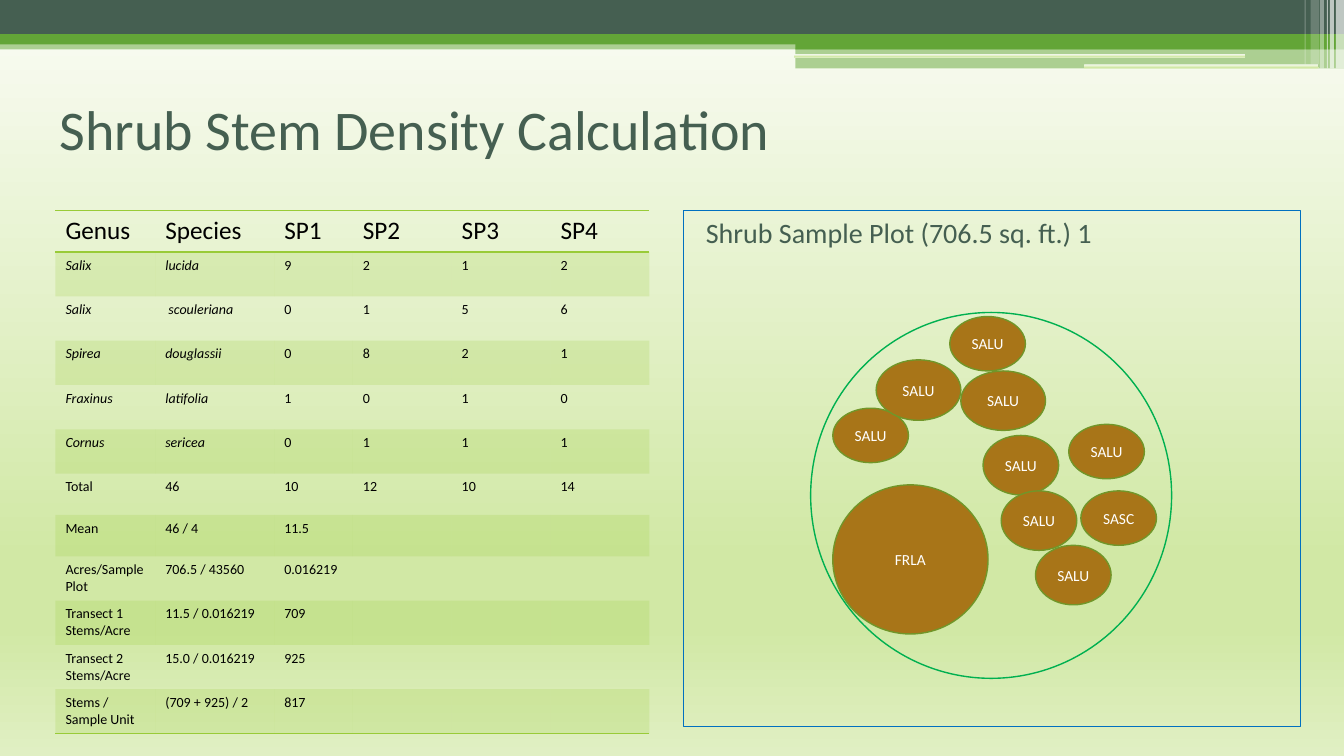
import dataclasses
import typing

import pptx
import pptx.dml.color
import pptx.enum.shapes
import pptx.enum.text
import pptx.oxml
import pptx.oxml.ns
import pptx.util

EMU_PER_PX = 9144
FONT = "Calibri"
DARK_GREEN = "455F51"
GREEN = "63A537"
LIME = "99CB38"
WHITE = "FFFFFF"
BLACK = "000000"
BROWN = "A87518"
BACKDROP_STOPS = [(0, "FAFCF5"), (74, "D1E8A5"), (83, "D1E8A5"), (100, "E0EFC3")]
NO_STYLE_NO_GRID = "{2D5ABB26-0587-4C30-8999-92F81FD0307C}"
RECTANGLE = pptx.enum.shapes.MSO_SHAPE.RECTANGLE
ROUNDED = pptx.enum.shapes.MSO_SHAPE.ROUNDED_RECTANGLE
OVAL = pptx.enum.shapes.MSO_SHAPE.OVAL
LEFT = pptx.enum.text.PP_ALIGN.LEFT
CENTER = pptx.enum.text.PP_ALIGN.CENTER


@dataclasses.dataclass
class Box:
    left: int
    top: int
    width: int
    height: int


@dataclasses.dataclass
class Band:
    box: Box
    color: str
    opacity: int = 100


@dataclasses.dataclass
class Shrub:
    box: Box
    code: str = "SALU"


BANDS = [
    Band(Box(0, 40, 1333, 9), GREEN, 50),
    Band(Box(0, 0, 1333, 34), DARK_GREEN),
    Band(Box(0, 34, 1333, 10), GREEN),
    Band(Box(789, 39, 544, 10), GREEN),
    Band(Box(789, 48, 544, 20), GREEN, 50),
]
BARS = [Box(788, 54, 447, 3), Box(1075, 64, 233, 4)]
STRIPES = [
    Band(Box(1325, 0, 8, 68), WHITE, 65),
    Band(Box(1319, 0, 4, 68), WHITE, 65),
    Band(Box(1316, 0, 1, 68), WHITE, 60),
    Band(Box(1309, 0, 4, 68), WHITE, 40),
    Band(Box(1300, 0, 8, 64), WHITE, 20),
    Band(Box(1294, 0, 1, 64), WHITE, 30),
]
SHRUBS = [
    Shrub(Box(826, 405, 75, 54)),
    Shrub(Box(1072, 487, 75, 54), "SASC"),
    Shrub(Box(953, 368, 84, 59)),
    Shrub(Box(826, 481, 154, 148), "FRLA"),
    Shrub(Box(1027, 541, 75, 59)),
    Shrub(Box(975, 432, 75, 59)),
    Shrub(Box(869, 357, 84, 60)),
    Shrub(Box(993, 487, 75, 59)),
    Shrub(Box(942, 314, 75, 54)),
    Shrub(Box(1060, 421, 75, 54)),
]
COLUMN_WIDTHS = [99, 118, 78, 98, 98, 98]
ROW_HEIGHTS = [41] + [44] * 5 + [41] * 2 + [44] * 4
SPECIES_ROWS = range(1, 6)
DENSITY_ROWS = [
    ["Genus", "Species", "SP1", "SP2", "SP3", "SP4"],
    ["Salix", "lucida", "9", "2", "1", "2"],
    ["Salix", " scouleriana", "0", "1", "5", "6"],
    ["Spirea", "douglassii", "0", "8", "2", "1"],
    ["Fraxinus", "latifolia", "1", "0", "1", "0"],
    ["Cornus", "sericea", "0", "1", "1", "1"],
    ["Total", "46", "10", "12", "10", "14"],
    ["Mean", "46 / 4", "11.5", "", "", ""],
    ["Acres/Sample Plot", "706.5 / 43560", "0.016219", "", "", ""],
    ["Transect 1 Stems/Acre", "11.5 / 0.016219", "709", "", "", ""],
    ["Transect 2 Stems/Acre", "15.0 / 0.016219", "925", "", "", ""],
    ["Stems / Sample Unit", "(709 + 925) / 2", "817", "", "", ""],
]


def px(length: int) -> int:
    return pptx.util.Emu(length * EMU_PER_PX)


def place(box: Box) -> tuple:
    return px(box.left), px(box.top), px(box.width), px(box.height)


def rgb(color: str) -> pptx.dml.color.RGBColor:
    return pptx.dml.color.RGBColor.from_string(color)


def xml(markup: str) -> typing.Any:
    namespace = pptx.oxml.ns.nsdecls("a")
    return pptx.oxml.parse_xml(markup.replace(" ", f" {namespace} ", 1))


def fill_solid(fill: typing.Any, element: typing.Any, color: str, opacity: int = 100) -> None:
    fill.solid()
    fill.fore_color.rgb = rgb(color)
    if opacity < 100:
        swatch = element.find(".//" + pptx.oxml.ns.qn("a:srgbClr"))
        swatch.append(xml(f'<a:alpha val="{opacity * 1000}"/>'))


def fill_backdrop(fill: typing.Any, element: typing.Any) -> None:
    fill.gradient()
    gradient = element.find(".//" + pptx.oxml.ns.qn("a:gradFill"))
    for child in list(gradient):
        gradient.remove(child)
    stops = "".join(
        f'<a:gs pos="{position * 1000}"><a:srgbClr val="{color}"/></a:gs>'
        for position, color in BACKDROP_STOPS
    )
    gradient.append(xml(f"<a:gsLst >{stops}</a:gsLst>"))
    gradient.append(xml('<a:lin ang="5400000" scaled="0"/>'))


def add_shape(slide: typing.Any, kind: typing.Any, box: Box) -> typing.Any:
    shape = slide.shapes.add_shape(kind, *place(box))
    shape.shadow.inherit = False
    shape.fill.background()
    shape.line.fill.background()
    return shape


def set_line(shape: typing.Any, color: str, width: float) -> None:
    shape.line.color.rgb = rgb(color)
    shape.line.width = pptx.util.Pt(width)


def write(frame: typing.Any, text: str, size: int, color: str, alignment: typing.Any = LEFT) -> typing.Any:
    paragraph = frame.paragraphs[0]
    paragraph.text = text
    paragraph.alignment = alignment
    paragraph.font.size = pptx.util.Pt(size)
    paragraph.font.name = FONT
    paragraph.font.color.rgb = rgb(color)
    return paragraph


def add_band(slide: typing.Any, band: Band) -> None:
    shape = add_shape(slide, RECTANGLE, band.box)
    fill_solid(shape.fill, shape.element, band.color, band.opacity)


def add_title(slide: typing.Any) -> None:
    title = slide.shapes.title
    title.left, title.top, title.width, title.height = place(Box(49, 69, 1200, 117))
    title.text_frame.auto_size = pptx.enum.text.MSO_AUTO_SIZE.NONE
    title.text_frame.vertical_anchor = pptx.enum.text.MSO_ANCHOR.MIDDLE
    write(title.text_frame, "Shrub Stem Density Calculation", 40, DARK_GREEN)


def add_border(cell: typing.Any, side: str) -> None:
    cell._tc.get_or_add_tcPr().insert(0, xml(
        f'<a:ln{side} w="12700"><a:solidFill><a:srgbClr val="{LIME}"/></a:solidFill></a:ln{side}>'
    ))


def add_density_table(slide: typing.Any) -> None:
    box = Box(55, 209, sum(COLUMN_WIDTHS), sum(ROW_HEIGHTS))
    table = slide.shapes.add_table(len(ROW_HEIGHTS), len(COLUMN_WIDTHS), *place(box)).table
    table._tbl.tblPr.find(pptx.oxml.ns.qn("a:tableStyleId")).text = NO_STYLE_NO_GRID
    table.horz_banding = False
    table.first_row = False
    for column, width in zip(table.columns, COLUMN_WIDTHS):
        column.width = px(width)
    for row_index, texts in enumerate(DENSITY_ROWS):
        table.rows[row_index].height = px(ROW_HEIGHTS[row_index])
        for column_index, text in enumerate(texts):
            cell = table.cell(row_index, column_index)
            paragraph = write(cell.text_frame, text, 10 if row_index else 18, BLACK)
            paragraph.font.italic = row_index in SPECIES_ROWS and column_index < 2
            if row_index % 2:
                fill_solid(cell.fill, cell._tc.get_or_add_tcPr(), LIME, 20)
            else:
                cell.fill.background()
            if row_index in (0, len(DENSITY_ROWS) - 1):
                add_border(cell, "B")
            if row_index == 0:
                add_border(cell, "T")


def add_sample_plot(slide: typing.Any) -> None:
    panel = add_shape(slide, RECTANGLE, Box(678, 209, 612, 512))
    set_line(panel, "0070C0", 0.75)
    panel.text_frame.word_wrap = True
    panel.text_frame.vertical_anchor = pptx.enum.text.MSO_ANCHOR.TOP
    panel.text_frame.margin_left = px(22)
    heading = write(panel.text_frame, "Shrub Sample Plot (706.5 sq. ft.) 1", 20, DARK_GREEN)
    heading.space_before = pptx.util.Pt(3)
    set_line(add_shape(slide, OVAL, Box(804, 310, 358, 363)), "00B050", 1)


def add_shrub(slide: typing.Any, shrub: Shrub) -> None:
    shape = add_shape(slide, OVAL, shrub.box)
    fill_solid(shape.fill, shape.element, BROWN)
    set_line(shape, "719629", 1)
    shape.text_frame.word_wrap = False
    shape.text_frame.vertical_anchor = pptx.enum.text.MSO_ANCHOR.MIDDLE
    write(shape.text_frame, shrub.code, 11, WHITE, CENTER)


def main() -> None:
    presentation = pptx.Presentation()
    presentation.slide_width, presentation.slide_height = px(1333), px(750)
    slide = presentation.slides.add_slide(presentation.slide_layouts.get_by_name("Title Only"))
    fill_backdrop(slide.background.fill, slide.element)
    for band in BANDS:
        add_band(slide, band)
    for box in BARS:
        bar = add_shape(slide, ROUNDED, box)
        fill_backdrop(bar.fill, bar.element)
    for stripe in STRIPES:
        add_band(slide, stripe)
    add_title(slide)
    add_density_table(slide)
    add_sample_plot(slide)
    for shrub in SHRUBS:
        add_shrub(slide, shrub)
    presentation.save("out.pptx")


if __name__ == "__main__":
    main()
